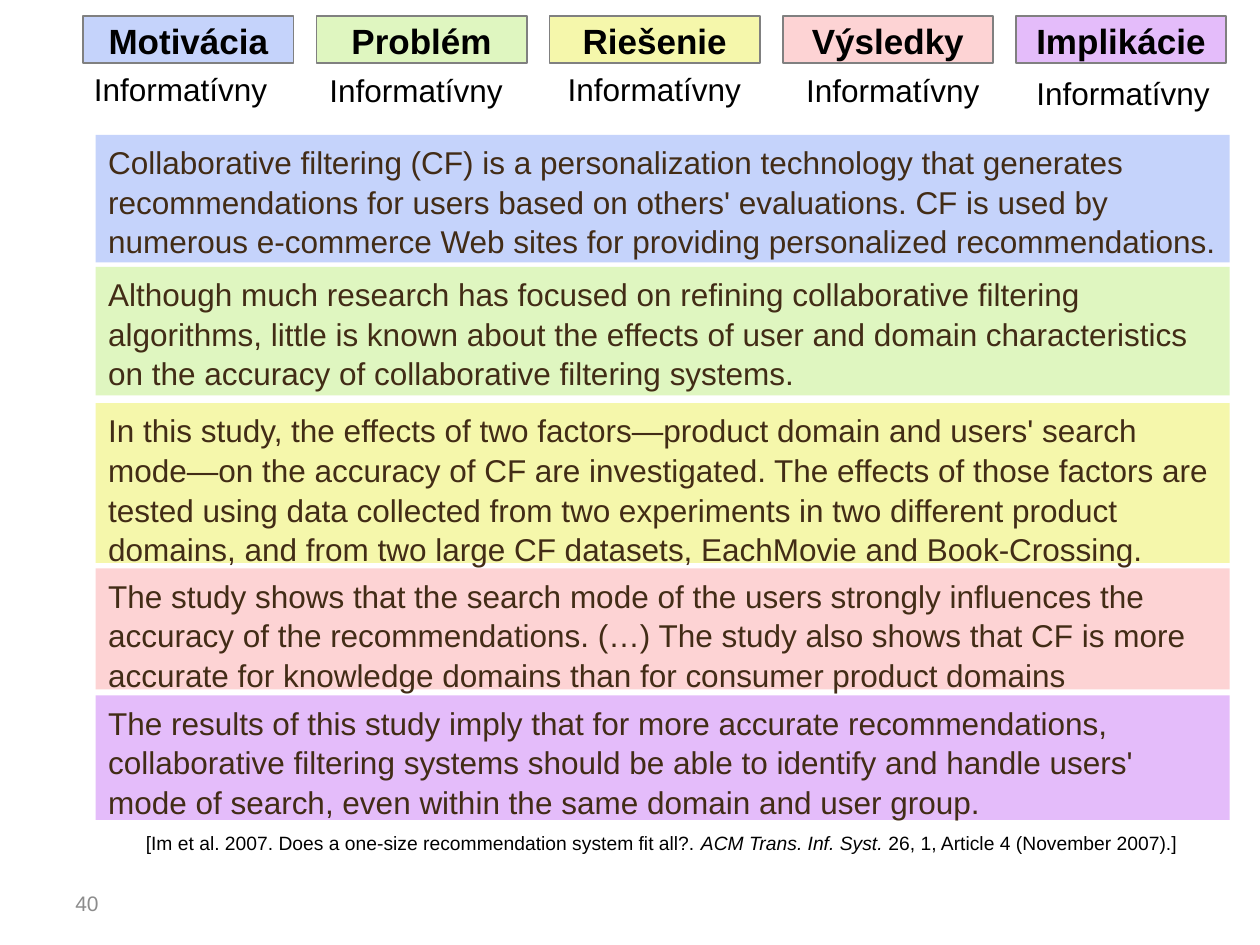
import pptx
import pptx.dml.color
import pptx.enum.shapes
import pptx.enum.text
import pptx.util
from pptx.util import Cm


def colour(hex_value):
    return pptx.dml.color.RGBColor.from_string(hex_value)


class AbstractSlide:
    """Holds the style and the current slide."""

    FONT = "Arial"
    INK = "000000"
    BODY_INK = "422C16"
    BORDER = "808080"
    PAGE_INK = "8C8C8C"
    LINE_SPACING = 1.05
    CENTER = pptx.enum.text.PP_ALIGN.CENTER
    LEFT = pptx.enum.text.PP_ALIGN.LEFT
    TOP = pptx.enum.text.MSO_ANCHOR.TOP
    MIDDLE = pptx.enum.text.MSO_ANCHOR.MIDDLE

    def __init__(self, presentation):
        self.slide = presentation.slides.add_slide(presentation.slide_layouts[6])

    def set_text(self, shape, runs, size, ink, align, anchor, bold=False):
        """Fill a shape with one paragraph of (text, italic) runs."""
        frame = shape.text_frame
        frame.word_wrap = True
        frame.vertical_anchor = anchor
        paragraph = frame.paragraphs[0]
        paragraph.alignment = align
        paragraph.line_spacing = self.LINE_SPACING
        paragraph.font.name = self.FONT
        paragraph.font.size = pptx.util.Pt(size)
        paragraph.font.bold = bold
        paragraph.font.color.rgb = colour(ink)
        for text, italic in runs:
            run = paragraph.add_run()
            run.text = text
            if italic:
                run.font.italic = True

    def box(self, left, top, width, height, fill):
        shape = self.slide.shapes.add_shape(
            pptx.enum.shapes.MSO_SHAPE.RECTANGLE,
            Cm(left), Cm(top), Cm(width), Cm(height))
        shape.shadow.inherit = False
        shape.fill.solid()
        shape.fill.fore_color.rgb = colour(fill)
        shape.line.fill.background()
        return shape

    def header(self, left, top, width, height, fill, text):
        shape = self.box(left, top, width, height, fill)
        shape.line.color.rgb = colour(self.BORDER)
        shape.line.width = pptx.util.Pt(1)
        self.set_text(shape, [(text, False)], 20, self.INK,
                      self.CENTER, self.MIDDLE, bold=True)

    def passage(self, left, top, width, height, fill, text):
        shape = self.box(left, top, width, height, fill)
        self.set_text(shape, [(text, False)], 18, self.BODY_INK,
                      self.LEFT, self.TOP)

    def note(self, left, top, width, height, runs, size, ink=INK,
             align=LEFT, anchor=TOP):
        shape = self.slide.shapes.add_textbox(
            Cm(left), Cm(top), Cm(width), Cm(height))
        self.set_text(shape, runs, size, ink, align, anchor)


# Each part: heading, fill, label left and top, passage top and height, passage
PARTS = [
    ("Motivácia", "C5D3FB", 1.52, 1.24, 2.72, 2.57,
     "Collaborative filtering (CF) is a personalization technology that "
     "generates recommendations for users based on others' evaluations. CF is "
     "used by numerous e-commerce Web sites for providing personalized "
     "recommendations."),
    ("Problém", "DFF6C0", 6.27, 1.27, 5.38, 2.59,
     "Although much research has focused on refining collaborative filtering "
     "algorithms, little is known about the effects of user and domain "
     "characteristics on the accuracy of collaborative filtering systems."),
    ("Riešenie", "F5F7AB", 11.07, 1.25, 8.13, 3.22,
     "In this study, the effects of two factors—product domain and users' "
     "search mode—on the accuracy of CF are investigated. The effects of those "
     "factors are tested using data collected from two experiments in two "
     "different product domains, and from two large CF datasets, EachMovie and "
     "Book-Crossing."),
    ("Výsledky", "FDD3D4", 15.88, 1.27, 11.46, 2.44,
     "The study shows that the search mode of the users strongly influences "
     "the accuracy of the recommendations. (…) The study also shows that CF is "
     "more accurate for knowledge domains than for consumer product domains"),
    ("Implikácie", "E4BCFA", 20.52, 1.32, 14.02, 2.51,
     "The results of this study imply that for more accurate recommendations, "
     "collaborative filtering systems should be able to identify and handle "
     "users' mode of search, even within the same domain and user group."),
]
HEADER_LEFT, HEADER_STEP, HEADER_WIDTH = 1.68, 4.7, 4.24


def main():
    presentation = pptx.Presentation()
    presentation.slide_width = Cm(25.4)
    presentation.slide_height = Cm(19.05)
    abstract = AbstractSlide(presentation)

    # Headings, their labels and the matching passages
    for index, (heading, fill, label_left, label_top,
                top, height, passage) in enumerate(PARTS):
        abstract.header(HEADER_LEFT + index * HEADER_STEP, 0.33,
                        HEADER_WIDTH, 0.94, fill, heading)
        abstract.note(label_left, label_top, HEADER_WIDTH, 0.86,
                      [("Informatívny", False)], 18, align=abstract.CENTER)
        abstract.passage(1.93, top, 22.86, height, fill, passage)

    # Citation
    citation = [
        ("[Im et al. 2007. Does a one-size recommendation system fit all?. ", False),
        ("ACM Trans. Inf. Syst.", True),
        (" 26, 1, Article 4 (November 2007).]", False),
    ]
    abstract.note(2.69, 16.61, 21.69, 0.74, citation, 11)

    # Page number
    abstract.note(1.27, 17.68, 5.92, 1.02, [("40", False)], 12,
                  ink=abstract.PAGE_INK, anchor=abstract.MIDDLE)

    presentation.save("out.pptx")


if __name__ == "__main__":
    main()
